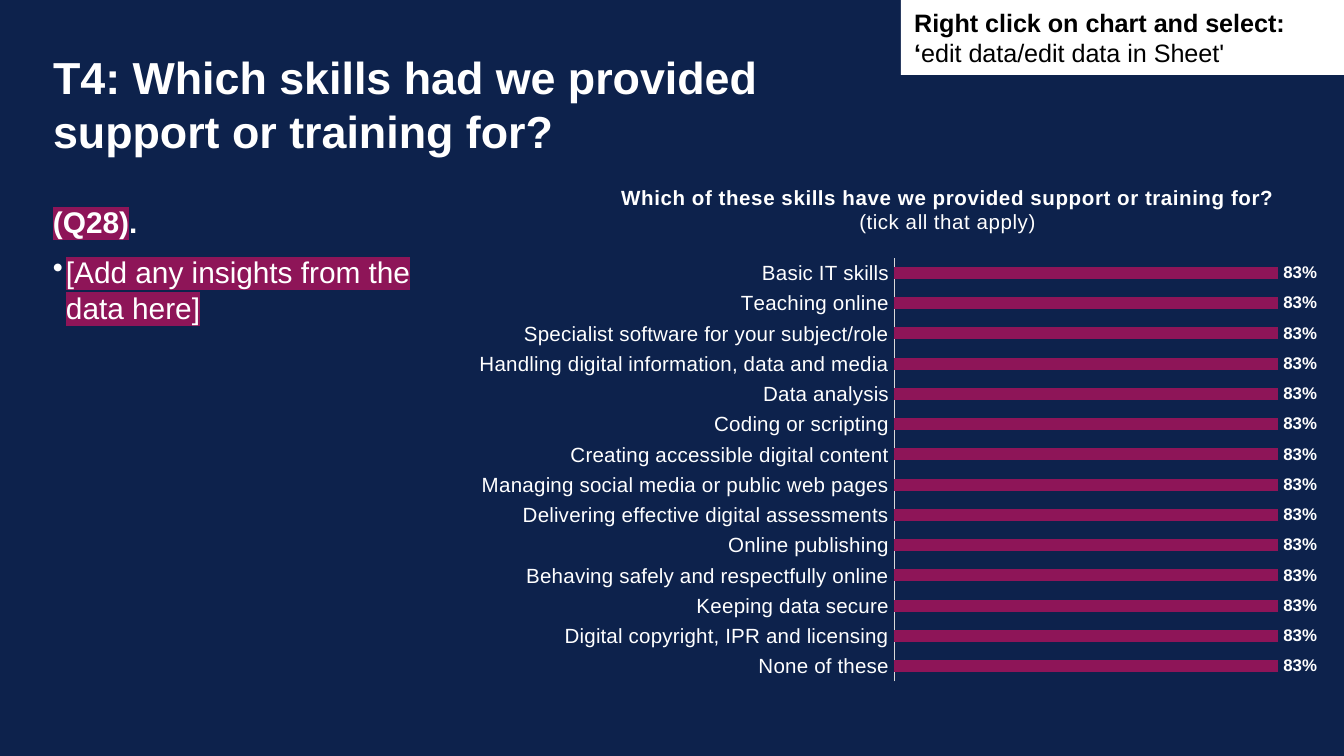
"""Build the slide on skills support and training with its bar chart."""
from lxml import etree
from pptx import Presentation
from pptx.chart.data import CategoryChartData
from pptx.dml.color import RGBColor
from pptx.enum.chart import XL_CHART_TYPE, XL_LABEL_POSITION, XL_TICK_LABEL_POSITION, XL_TICK_MARK
from pptx.enum.shapes import MSO_SHAPE
from pptx.enum.text import MSO_ANCHOR, PP_ALIGN
from pptx.oxml import parse_xml
from pptx.oxml.ns import nsdecls, qn
from pptx.util import Pt

BAR = XL_CHART_TYPE.BAR_CLUSTERED
OUTSIDE = XL_LABEL_POSITION.OUTSIDE_END
NEXT_TO = XL_TICK_LABEL_POSITION.NEXT_TO_AXIS
NO_TICK = XL_TICK_MARK.NONE
RECT = MSO_SHAPE.RECTANGLE
TOP, MIDDLE = MSO_ANCHOR.TOP, MSO_ANCHOR.MIDDLE
LEFT = PP_ALIGN.LEFT
PX = 914400 / 134.4
NAVY, PLUM, WHITE, BLACK, GREY = "0D224C", "8E1558", "FFFFFF", "000000", "D9D9D9"


def style(font, size, color=WHITE, bold=False, spacing=None):
    font.name, font.size, font.bold = "Arial", Pt(size), bold
    font.fill.solid()
    font.fill.fore_color.rgb = RGBColor.from_string(color)
    if spacing:
        font._rPr.set("spc", str(spacing))


def add_text(p, text, highlight=None, **fmt):
    for i, line in enumerate(text.split("\n")):
        if i:
            p.add_line_break()
        r = p.add_run()
        r.text = line
        style(r.font, **fmt)
        if highlight:
            mark = parse_xml(f'<a:highlight {nsdecls("a")}><a:srgbClr val="{highlight}"/></a:highlight>')
            r.font._rPr.find(qn("a:solidFill")).addnext(mark)


prs = Presentation()
prs.slide_width, prs.slide_height = int(1344 * PX), int(756 * PX)
s = prs.slides.add_slide(prs.slide_layouts[6])
s.background.fill.solid()
s.background.fill.fore_color.rgb = RGBColor.from_string(NAVY)

frames = []
for box in [(53, 50, 958, 50), (53, 204, 376, 444)]:
    tf = s.shapes.add_textbox(*[int(v * PX) for v in box]).text_frame
    tf.word_wrap, tf.vertical_anchor = True, TOP
    tf.margin_left = tf.margin_right = tf.margin_top = tf.margin_bottom = 0
    frames.append(tf)
title_tf, body_tf = frames

add_text(title_tf.paragraphs[0], "T4: Which skills had we provided\nsupport or training for?", size=24, bold=True)

p = body_tf.paragraphs[0]
add_text(p, "(Q28)", size=16, bold=True, highlight=PLUM)
add_text(p, ".", size=16, bold=True)
p = body_tf.add_paragraph()
p.space_before = Pt(7.5)
pPr = p._p.get_or_add_pPr()
pPr.set("marL", str(int(13 * PX)))
pPr.set("indent", str(-int(13 * PX)))
etree.SubElement(pPr, qn("a:buChar")).set("char", "•")
add_text(p, "[Add any insights from the data here]", size=16, highlight=PLUM)

skills = [
    "Basic IT skills", "Teaching online", "Specialist software for your subject/role",
    "Handling digital information, data and media", "Data analysis", "Coding or scripting",
    "Creating accessible digital content", "Managing social media or public web pages",
    "Delivering effective digital assessments", "Online publishing",
    "Behaving safely and respectfully online", "Keeping data secure",
    "Digital copyright, IPR and licensing", "None of these",
]
data = CategoryChartData(number_format="0%")
data.categories = skills
data.add_series("Series 1", [0.83] * len(skills))
chart = s.shapes.add_chart(BAR, *[int(v * PX) for v in (461, 169, 867, 523)], data).chart
style(chart.font, 10)
chart.has_legend = False

tf = chart.chart_title.text_frame
add_text(tf.paragraphs[0], "Which of these skills have we provided support or training for?",
         size=11, bold=True, spacing=20)
add_text(tf.add_paragraph(), "(tick all that apply)", size=11, spacing=20)
chart.chart_title.include_in_layout = False

axis = chart.category_axis
axis.reverse_order = True
axis.major_tick_mark = axis.minor_tick_mark = NO_TICK
axis.tick_label_position = NEXT_TO
axis.format.line.width = Pt(0.75)
axis.format.line.color.rgb = RGBColor.from_string(GREY)
style(axis.tick_labels.font, 11)

axis = chart.value_axis
axis.minimum_scale, axis.maximum_scale = 0, 0.9
axis.has_major_gridlines = False
axis.visible = False

plot = chart.plots[0]
plot.gap_width, plot.vary_by_categories = 150, False
series = plot.series[0]
series.format.fill.solid()
series.format.fill.fore_color.rgb = RGBColor.from_string(PLUM)
labels = series.data_labels
labels.show_value, labels.position = True, OUTSIDE
labels.number_format, labels.number_format_is_linked = "0%", False
style(labels.font, 9, bold=True)

layouts = {
    "c:title": {"xMode": "edge", "yMode": "edge", "x": 0.18, "y": 0.02},
    "c:plotArea": {"layoutTarget": "inner", "xMode": "edge", "yMode": "edge",
                   "x": 0.5, "y": 0.17, "w": 0.48, "h": 0.81},
}
for tag, values in layouts.items():
    part = chart._chartSpace.chart.find(qn(tag))
    layout = part.find(qn("c:layout"))
    if layout is None:
        layout = etree.Element(qn("c:layout"))
        part.insert(1 if tag == "c:title" else 0, layout)
    for child in list(layout):
        layout.remove(child)
    manual = etree.SubElement(layout, qn("c:manualLayout"))
    for name, value in values.items():
        etree.SubElement(manual, qn(f"c:{name}")).set("val", str(value))

note = s.shapes.add_shape(RECT, *[int(v * PX) for v in (901, 0, 443, 75)])
note.shadow.inherit = False
note.fill.solid()
note.fill.fore_color.rgb = RGBColor.from_string(WHITE)
note.line.fill.background()
tf = note.text_frame
tf.word_wrap, tf.vertical_anchor = True, MIDDLE
p = tf.paragraphs[0]
p.alignment = LEFT
add_text(p, "Right click on chart and select:", size=13.5, color=BLACK, bold=True)
p = tf.add_paragraph()
p.alignment = LEFT
add_text(p, "‘", size=13.5, color=BLACK, bold=True)
add_text(p, "edit data/edit data in Sheet'", size=13.5, color=BLACK)

prs.save("out.pptx")
